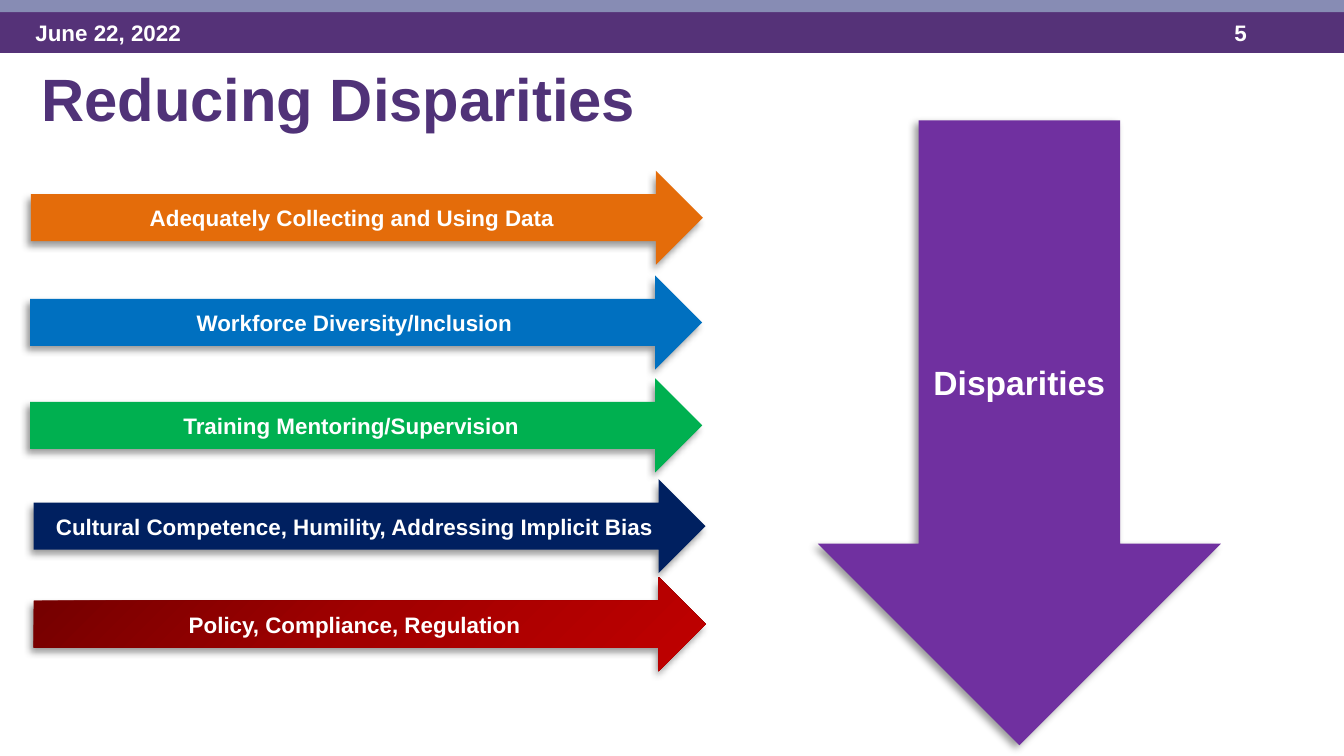
from lxml import etree
from pptx import Presentation
from pptx import util as u
from pptx.dml.color import RGBColor
from pptx.enum import shapes, text
from pptx.oxml import ns

PX = 4572
WHITE = RGBColor(0xFF, 0xFF, 0xFF)
PURPLE = RGBColor(0x55, 0x32, 0x78)
TITLE = RGBColor(0x50, 0x32, 0x78)
LILAC = RGBColor(0x87, 0x8C, 0xB4)
VIOLET = RGBColor(0x70, 0x30, 0xA0)
ORANGE = RGBColor(0xE4, 0x6C, 0x0A)
BLUE = RGBColor(0x00, 0x70, 0xC0)
GREEN = RGBColor(0x00, 0xB0, 0x50)
NAVY = RGBColor(0x00, 0x20, 0x60)
REDS = [(0, RGBColor(0x72, 0, 0)), (50, RGBColor(0xA2, 0, 0)), (100, RGBColor(0xC0, 0, 0))]

STEPS = [
    ("Workforce Diversity/Inclusion", BLUE, 0, 156),
    ("Training Mentoring/Supervision ", GREEN, 0, 309),
    ("Cultural Competence, Humility, Addressing Implicit Bias ", NAVY, 5, 459),
    ("Policy, Compliance, Regulation ", REDS, 5, 605),
    ("Adequately Collecting and Using Data ", ORANGE, 1, 0),
]


def emu(box):
    """Turn a box in px into EMU lengths."""
    return [u.Emu(n * PX) for n in box]


def write(shape, words, size=12, color=WHITE, align=text.PP_ALIGN.LEFT,
          anchor=text.MSO_ANCHOR.TOP):
    """Put one bold formatted line of text in a shape."""
    frame = shape.text_frame
    frame.word_wrap = True
    frame.vertical_anchor = anchor
    para = frame.paragraphs[0]
    para.alignment = align
    run = para.add_run()
    run.text = words
    font = run.font
    font.name, font.size, font.bold = "Arial", u.Pt(size), True
    font.color.rgb = color


def label(slide, box, words, **form):
    """Add a text box."""
    write(slide.shapes.add_textbox(*emu(box)), words, **form)


def blend(shape, stops):
    """Fill a shape with a diagonal gradient of (percent, colour) stops."""
    shape.fill.gradient()
    shape.fill.gradient_angle = 315
    group = shape._element.spPr.find(".//" + ns.qn("a:gsLst"))
    for old in list(group):
        group.remove(old)
    for place, color in stops:
        stop = etree.SubElement(group, ns.qn("a:gs"), pos=str(place * 1000))
        etree.SubElement(stop, ns.qn("a:srgbClr"), val=str(color))


def shade(shape):
    """Cast a soft shadow to the lower left."""
    group = shape._element.spPr.find(ns.qn("a:effectLst"))
    cast = etree.SubElement(group, ns.qn("a:outerShdw"), blurRad=str(u.Pt(4)),
                            dist=str(u.Pt(3)), dir="8100000", algn="tr", rotWithShape="0")
    color = etree.SubElement(cast, ns.qn("a:srgbClr"), val="000000")
    etree.SubElement(color, ns.qn("a:alpha"), val="40000")


def block(slide, kind, box, fill):
    """Add a preset shape with no line and a plain or gradient fill."""
    shape = slide.shapes.add_shape(kind, *emu(box))
    shape.shadow.inherit = False
    shape.line.fill.background()
    if isinstance(fill, list):
        blend(shape, fill)
    else:
        shape.fill.solid()
        shape.fill.fore_color.rgb = fill
    return shape


def arrow(slide, kind, box, fill, words, size=12):
    """Add a shadowed block arrow with a centred caption."""
    shape = block(slide, kind, box, fill)
    shade(shape)
    write(shape, words, size=size, align=text.PP_ALIGN.CENTER,
          anchor=text.MSO_ANCHOR.MIDDLE)


def header(slide, box):
    """Draw the top bands with the date and page number."""
    left, top, width, height = box
    rect = shapes.MSO_SHAPE.RECTANGLE
    block(slide, rect, (left, top + 13, width, height - 13), PURPLE)
    label(slide, (left + 33, top + 19, 467, 60), "June 22, 2022")
    label(slide, (left + 1817, top + 19, 150, 60), "5")
    block(slide, rect, (left, top, width, 18), LILAC)


def steps(slide, box):
    """Draw the measures as arrows pointing right."""
    left, top, width, height = box
    for words, fill, x, y in STEPS:
        arrow(slide, shapes.MSO_SHAPE.RIGHT_ARROW,
              (left + x, top + y, width, height), fill, words)


def main():
    """Build and save the slide."""
    deck = Presentation()
    deck.slide_width, deck.slide_height = emu((2000, 1125))
    slide = deck.slides.add_slide(deck.slide_layouts[6])
    header(slide, (0, 0, 2000, 79))
    label(slide, (42, 82, 1484, 166), "Reducing Disparities", size=32, color=TITLE)
    arrow(slide, shapes.MSO_SHAPE.DOWN_ARROW, (1217, 179, 600, 930), VIOLET,
          "Disparities", size=18)
    steps(slide, (45, 254, 1000, 140))
    deck.save("out.pptx")


if __name__ == "__main__":
    main()
